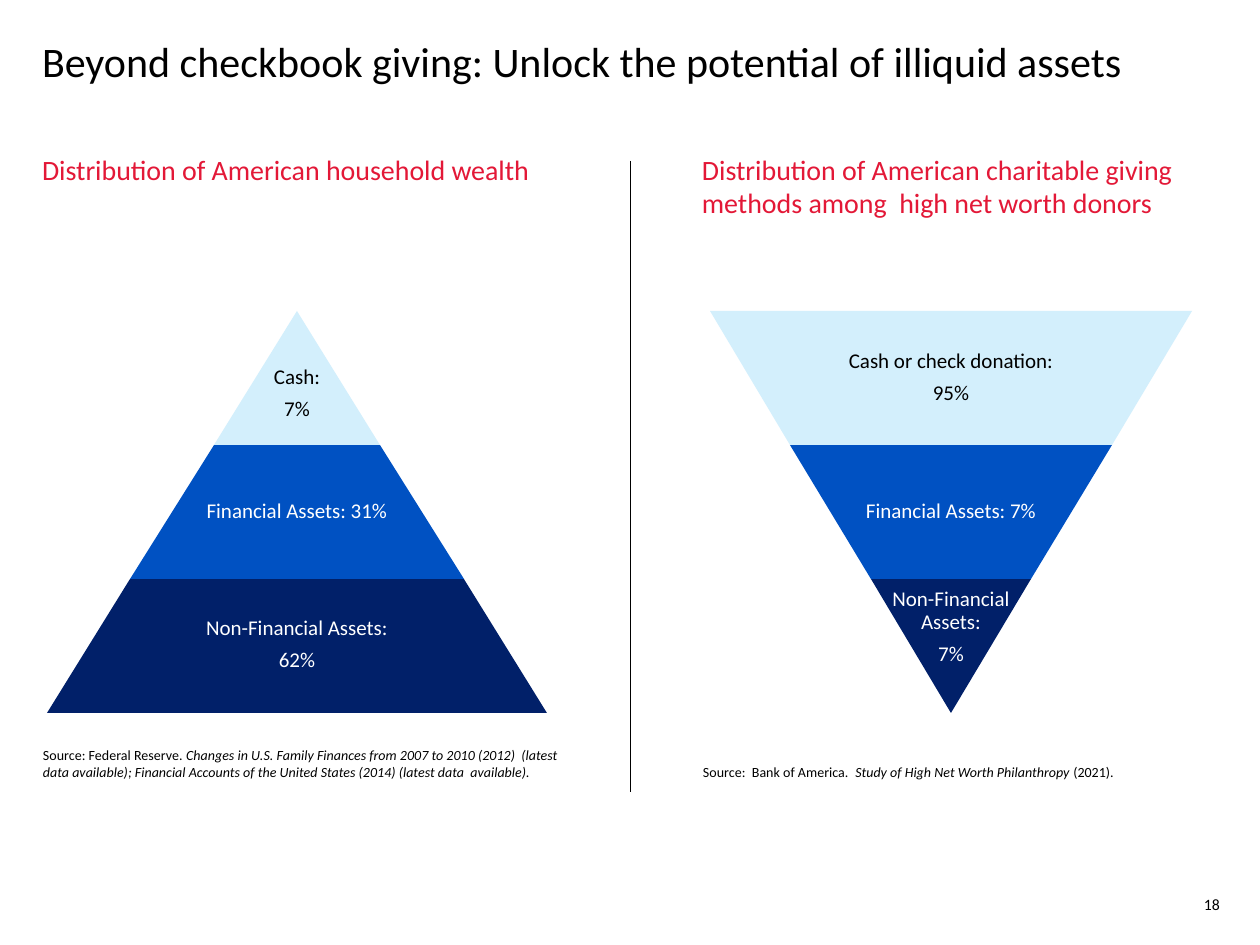
from lxml.etree import SubElement
from pptx import Presentation
from pptx.dml.color import RGBColor
from pptx.enum.shapes import MSO_CONNECTOR
from pptx.enum.text import MSO_ANCHOR as Anchor, MSO_AUTO_SIZE as AutoSize, PP_ALIGN as Align
from pptx.oxml.ns import qn
from pptx.util import Pt

PX = 914400 / 126
FONT = "Calibri"
BLACK = RGBColor(0x00, 0x00, 0x00)
WHITE = RGBColor(0xFF, 0xFF, 0xFF)
RED = RGBColor(0xE3, 0x18, 0x37)
PALE = RGBColor(0xD3, 0xEF, 0xFC)
BLUE = RGBColor(0x00, 0x51, 0xC2)
NAVY = RGBColor(0x01, 0x20, 0x69)

# Content
TITLE = "Beyond checkbook giving: Unlock the potential of illiquid assets"
PAGE_NUMBER = "18"
TIER_COLORS = [(PALE, BLACK), (BLUE, WHITE), (NAVY, WHITE)]  # fill, label
# edges: half-width of the pyramid at its top and bottom
# labels: top, width, lines; source: (text, italic) parts
PYRAMIDS = [
    dict(
        heading="Distribution of American household wealth",
        left=42, axis=297, edges=(0, 250),
        labels=[(364, 60, ["Cash:", "7%"]),
                (498, 200, ["Financial Assets: 31%"]),
                (615, 200, ["Non-Financial Assets:", "62%"])],
        source=[("Source: Federal Reserve. ", False),
                ("Changes in U.S. Family Finances from 2007 to 2010 (2012)  (latest data available); "
                 "Financial Accounts of the United States (2014) (latest data  available).", True)],
        source_box=(43, 747, 517, 40),
    ),
    dict(
        heading="Distribution of American charitable giving methods among  high net worth donors",
        left=702, axis=951, edges=(241, 0),
        labels=[(348, 220, ["Cash or check donation:", "95%"]),
                (498, 200, ["Financial Assets: 7%"]),
                (588, 124, ["Non-Financial Assets:", "7%"])],
        source=[("Source:  Bank of America.  ", False),
                ("Study of High Net Worth Philanthropy ", True),
                ("(2021).", False)],
        source_box=(703, 764, 440, 24),
    ),
]
PYRAMID_TOP, TIER_HEIGHT = 311, 134


def emu(*lengths):
    return [round(length * PX) for length in lengths]


def style(paragraph, size, color, align=Align.LEFT):
    paragraph.alignment = align
    font = paragraph.font
    font.name, font.size, font.color.rgb = FONT, Pt(size), color


def fill_placeholder(placeholder, text, box, size, color):
    placeholder.left, placeholder.top, placeholder.width, placeholder.height = emu(*box)
    frame = placeholder.text_frame
    frame.text = text
    frame.auto_size = AutoSize.NONE
    frame.vertical_anchor = Anchor.TOP
    frame.margin_left = frame.margin_right = 0
    paragraph = frame.paragraphs[0]
    properties = paragraph._p.get_or_add_pPr()
    properties.set("marL", "0")
    properties.set("indent", "0")
    SubElement(properties, qn("a:buNone"))
    paragraph.space_before = Pt(0)
    style(paragraph, size, color)


def add_text_frame(shapes, box):
    frame = shapes.add_textbox(*emu(*box)).text_frame
    frame.word_wrap = True
    frame.margin_left = frame.margin_right = frame.margin_top = frame.margin_bottom = 0
    return frame


def add_tier(shapes, axis, edges, index, color):
    start, end = edges
    upper, lower = (start + (end - start) * step / 3 for step in (index, index + 1))
    top = PYRAMID_TOP + index * TIER_HEIGHT
    bottom = top + TIER_HEIGHT
    corners = [(axis - upper, top), (axis + upper, top), (axis + lower, bottom), (axis - lower, bottom)]
    first, *rest = dict.fromkeys(corners)  # the apex counts once
    builder = shapes.build_freeform(*first, scale=PX)
    builder.add_line_segments(rest, close=True)
    tier = builder.convert_to_shape()
    tier.shadow.inherit = False
    tier.fill.solid()
    tier.fill.fore_color.rgb = color
    tier.line.fill.background()


def add_label(shapes, axis, label, color):
    top, width, lines = label
    frame = add_text_frame(shapes, (axis - width / 2, top, width, 26 * len(lines)))
    for index, line in enumerate(lines):
        paragraph = frame.paragraphs[0] if index == 0 else frame.add_paragraph()
        paragraph.text = line
        if index:
            paragraph.space_before = Pt(3.8)
        elif width < 130 and len(line) > 10:  # wraps inside the narrow apex
            paragraph.line_spacing = Pt(13.2)
        style(paragraph, 12, color, Align.CENTER)


def add_source(shapes, parts, box):
    paragraph = add_text_frame(shapes, box).paragraphs[0]
    for text, italic in parts:
        run = paragraph.add_run()
        run.text = text
        run.font.italic = italic
    style(paragraph, 8, BLACK)


def main():
    deck = Presentation()
    deck.slide_width, deck.slide_height = emu(1260, 945)
    slide = deck.slides.add_slide(deck.slide_layouts[3])
    title, *headings = slide.placeholders
    fill_placeholder(title, TITLE, (42, 29, 1177, 98), 24, BLACK)

    # Pyramids with heading and source
    for heading, pyramid in zip(headings, PYRAMIDS):
        fill_placeholder(heading, pyramid["heading"], (pyramid["left"], 146, 540, 75), 16, RED)
        shapes = slide.shapes.add_group_shape().shapes
        axis = pyramid["axis"]
        for index, (fill, label_color) in enumerate(TIER_COLORS):
            add_tier(shapes, axis, pyramid["edges"], index, fill)
            add_label(shapes, axis, pyramid["labels"][index], label_color)
        add_source(shapes, pyramid["source"], pyramid["source_box"])

    # Divider between the halves
    divider = slide.shapes.add_connector(MSO_CONNECTOR.STRAIGHT, *emu(630, 161, 630, 792))
    divider.line.color.rgb = BLACK
    divider.line.width = Pt(0.25)
    SubElement(divider._element.spPr, qn("a:effectLst"))

    # Page number
    number = add_text_frame(slide.shapes, (1174, 888, 76, 32))
    number.vertical_anchor = Anchor.MIDDLE
    number.text = PAGE_NUMBER
    style(number.paragraphs[0], 9, BLACK, Align.CENTER)

    deck.save("out.pptx")


if __name__ == "__main__":
    main()
